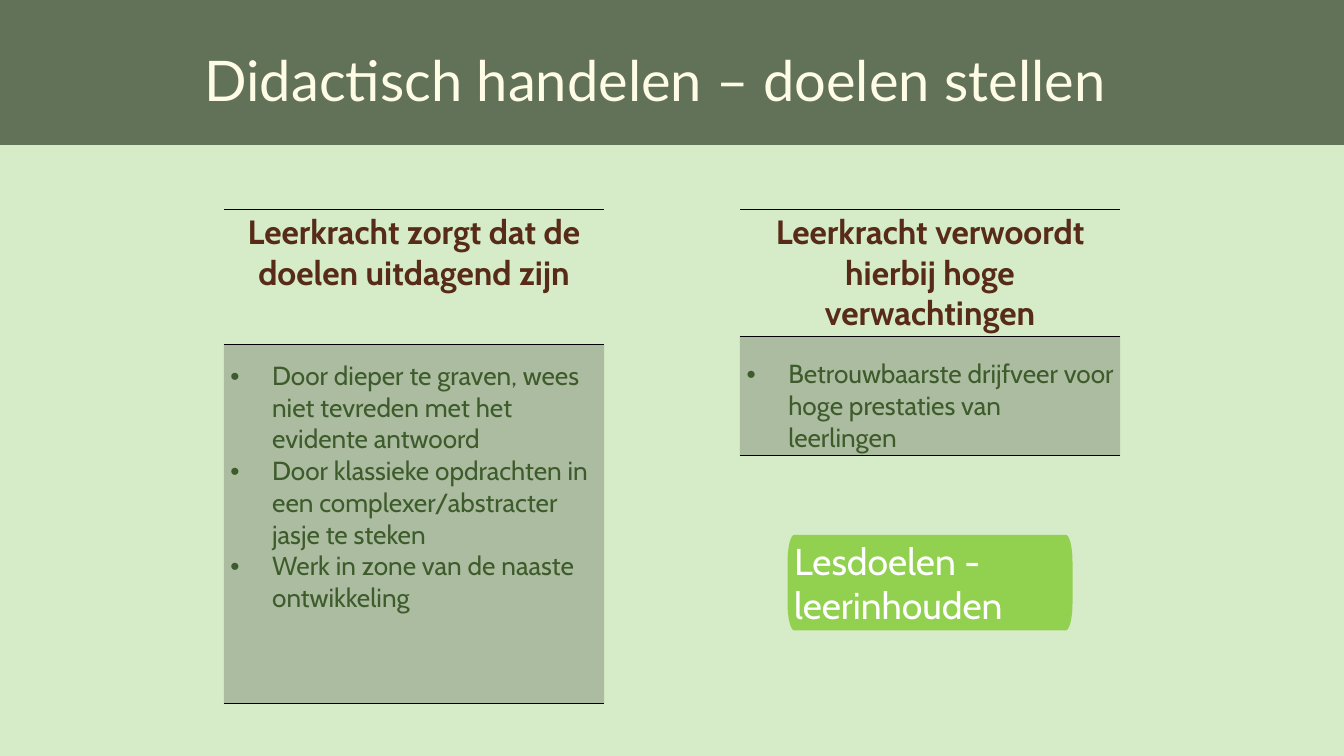
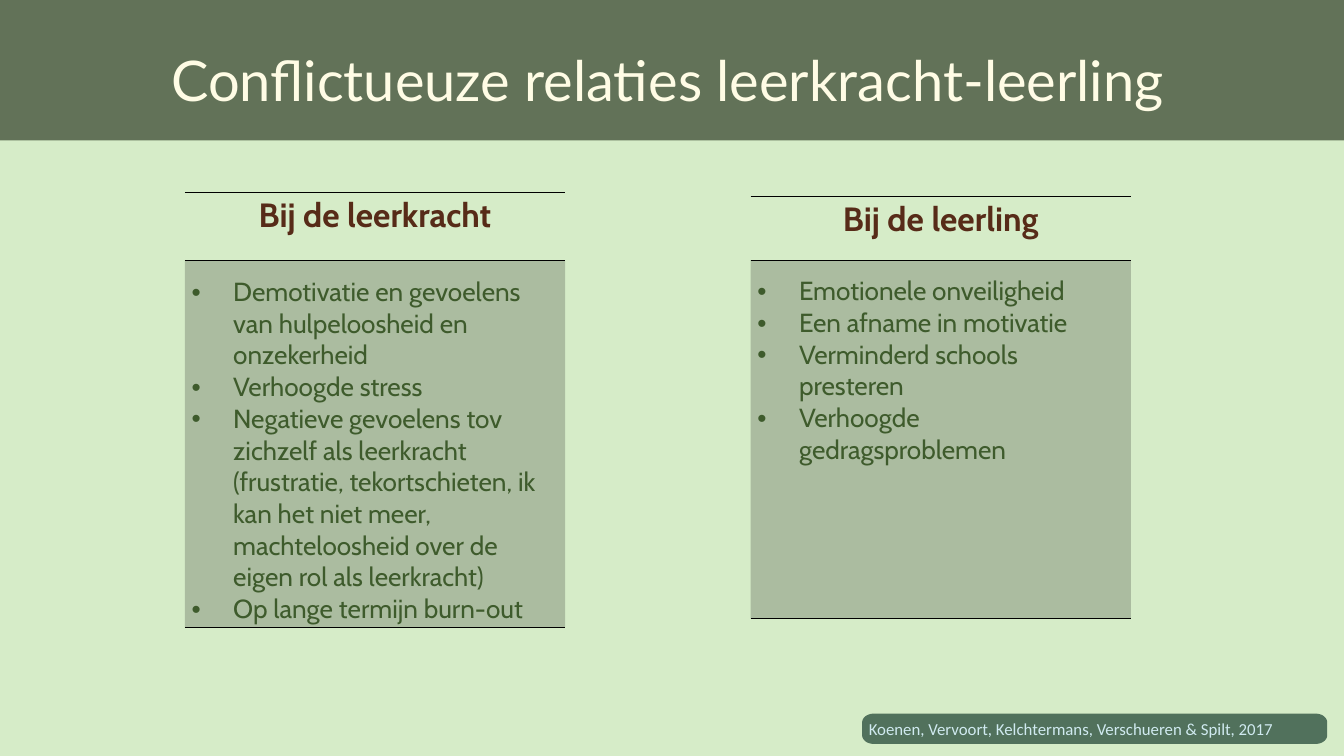
import math

import pptx
import pptx.dml.color
import pptx.enum.shapes
import pptx.enum.text
import pptx.oxml
import pptx.oxml.ns
import pptx.util

Inches = pptx.util.Inches
Pt = pptx.util.Pt
ALIGN = pptx.enum.text.PP_ALIGN
MIDDLE = pptx.enum.text.MSO_ANCHOR.MIDDLE

DARK = "627258"
PALE = "D6ECC8"
CREAM = "FFFCE5"
BROWN = "572B18"
GREEN = "3E5B2C"
LIME = "92D050"
MOSS = "51715C"
WHITE = "FFFFFF"
ICE = "D0EAF0"
BLACK = "000000"

WIDE = 5.66
HANG = 0.62
PAD = 0.03


def tint(fill, code):
    fill.solid()
    fill.fore_color.rgb = pptx.dml.color.RGBColor.from_string(code)


def style(para, name, size, code, bold=False, align=ALIGN.LEFT):
    para.alignment = align
    font = para.font
    font.name = name
    font.size = Pt(size)
    font.bold = bold
    tint(font.fill, code)


def node(text):
    tag, rest = text.split(" ", 1)
    space = pptx.oxml.ns.nsdecls("a")
    return pptx.oxml.parse_xml(f"<a:{tag} {space} {rest}")


def rule(cell):
    props = cell._tc.get_or_add_tcPr()
    none = "<a:noFill/>"
    line = f'<a:solidFill><a:srgbClr val="{BLACK}"/></a:solidFill>'
    sides = [("L", none), ("R", none), ("T", line), ("B", line)]
    for spot, (side, ink) in enumerate(sides):
        props.insert(spot, node(f'ln{side} w="{Pt(1)}">{ink}</a:ln{side}>'))


def bullet(para):
    props = para._p.get_or_add_pPr()
    props.set("marL", str(Inches(HANG)))
    props.set("indent", str(-Inches(HANG)))
    props.append(node('buFont typeface="Arial"/>'))
    props.append(node('buChar char="•"/>'))


def frame(deck, title, box, panel):
    slide = deck.slides.add_slide(deck.slide_layouts[5])
    tint(slide.background.fill, DARK)

    left, top = panel
    kind = pptx.enum.shapes.MSO_SHAPE.RECTANGLE
    field = slide.shapes.add_shape(
        kind, Inches(left), Inches(top), Inches(20.64), Inches(9.4))
    field.shadow.inherit = False
    tint(field.fill, PALE)
    field.line.fill.background()

    head = slide.shapes.title
    left, wide = box
    head.left, head.top = Inches(left), Inches(0.62)
    head.width, head.height = Inches(wide), Inches(1.11)
    text = head.text_frame
    text.auto_size = pptx.enum.text.MSO_AUTO_SIZE.NONE
    text.vertical_anchor = MIDDLE
    text.margin_left = text.margin_right = 0
    text.text = title
    style(text.paragraphs[0], "Lato", 60, CREAM, align=ALIGN.CENTER)
    return slide


def card(slide, place, rows, head, items, gap=0.23):
    left, top = place
    grid = slide.shapes.add_table(
        2, 1, Inches(left), Inches(top), Inches(WIDE), Inches(sum(rows))).table
    for row, high in zip(grid.rows, rows):
        row.height = Inches(high)
    upper, lower = grid.cell(0, 0), grid.cell(1, 0)
    for cell in (upper, lower):
        cell.margin_left = cell.margin_right = Inches(0.1)
        cell.margin_top = cell.margin_bottom = Inches(PAD)
        rule(cell)

    upper.fill.background()
    upper.text = head
    style(upper.text_frame.paragraphs[0], "Cabin", 36, BROWN, True, ALIGN.CENTER)

    tint(lower.fill, BLACK)
    shade = lower._tc.tcPr.find(pptx.oxml.ns.qn("a:solidFill"))
    shade[0].append(node('alpha val="20000"/>'))
    lower.margin_top = Inches(gap)
    lower.text = "\n".join(items)
    for para in lower.text_frame.paragraphs:
        bullet(para)
        style(para, "Cabin", 28, GREEN)


def pill(slide, box, curve, code, words, face):
    left, top, wide, high = box
    across, down = curve
    points = []
    hubs = [(wide - across, high - down), (across, high - down),
            (across, down), (wide - across, down)]
    for turn, (x, y) in enumerate(hubs):
        for step in range(13):
            angle = math.radians(90 * turn + 7.5 * step)
            points.append((Inches(left + x + across * math.cos(angle)),
                           Inches(top + y + down * math.sin(angle))))
    path = slide.shapes.build_freeform(*points[0])
    path.add_line_segments(points[1:], close=True)
    shape = path.convert_to_shape()
    shape.shadow.inherit = False
    tint(shape.fill, code)
    shape.line.fill.background()
    text = shape.text_frame
    text.word_wrap = True
    text.vertical_anchor = MIDDLE
    text.margin_left = text.margin_right = Inches(0.1)
    text.margin_top = text.margin_bottom = 0
    text.text = words
    style(text.paragraphs[0], *face)


def goals(deck):
    slide = frame(deck, "Didactisch handelen – doelen stellen",
                  (1.08, 17.33), (-0.29, 2.16))
    card(slide, (3.33, 3.12), (2.01, 5.33),
         "Leerkracht zorgt dat de doelen uitdagend zijn",
         ["Door dieper te graven, wees niet tevreden met het evidente antwoord",
          "Door klassieke opdrachten in een complexer/abstracter jasje te steken",
          "Werk in zone van de naaste ontwikkeling"])
    card(slide, (11.01, 3.12), (1.85, 1.64),
         "Leerkracht verwoordt hierbij hoge verwachtingen",
         ["Betrouwbaarste drijfveer voor hoge prestaties van leerlingen"], 0.33)
    pill(slide, (11.72, 7.96, 4.24, 1.42), (0.1, 0.4), LIME,
         "Lesdoelen - leerinhouden", ("Cabin", 40, WHITE))


def bonds(deck):
    slide = frame(deck, "Conflictueuze relaties leerkracht-leerling",
                  (0.13, 19.61), (-0.32, 2.09))
    card(slide, (2.75, 2.87), (1.01, 5.33), "Bij de leerkracht",
         ["Demotivatie en gevoelens van hulpeloosheid en onzekerheid",
          "Verhoogde stress",
          "Negatieve gevoelens tov zichzelf als leerkracht (frustratie, "
          "tekortschieten, ik kan het niet meer, machteloosheid over de "
          "eigen rol als leerkracht)",
          "Op lange termijn burn-out"])
    card(slide, (11.17, 2.93), (0.94, 5.33), "Bij de leerling",
         ["Emotionele onveiligheid",
          "Een afname in motivatie",
          "Verminderd schools presteren",
          "Verhoogde gedragsproblemen"])
    pill(slide, (12.83, 10.62, 6.92, 0.45), (0.17, 0.13), MOSS,
         "Koenen, Vervoort, Kelchtermans, Verschueren & Spilt, 2017",
         ("Calibri", 18, ICE))


def main():
    deck = pptx.Presentation()
    deck.slide_width, deck.slide_height = Inches(20), Inches(11.25)
    goals(deck)
    bonds(deck)
    deck.save("out.pptx")


if __name__ == "__main__":
    main()
